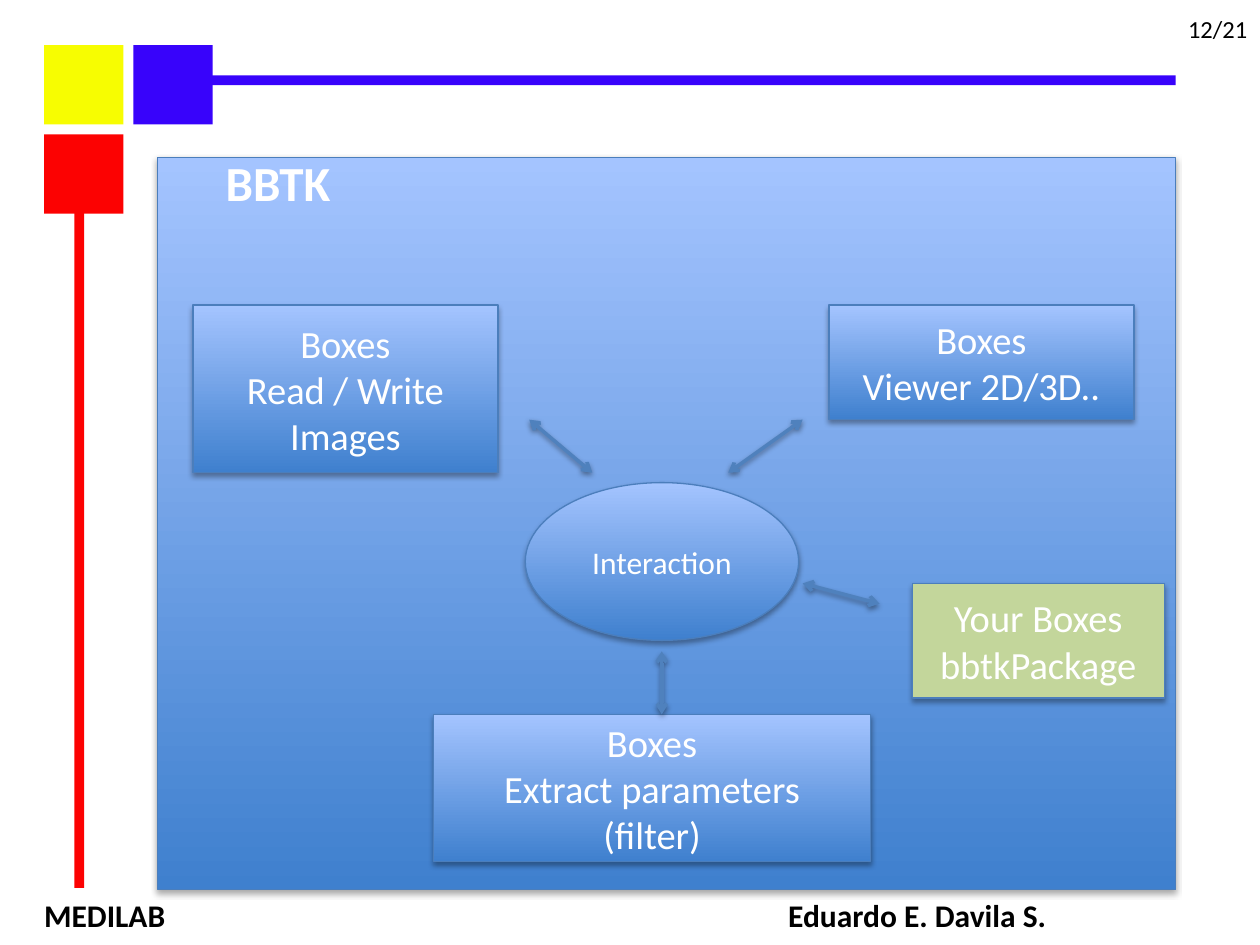
"""Build the BBTK slide: kinds of boxes around a central interaction."""
from lxml import etree
from pptx import Presentation
from pptx import util as u
from pptx.dml.color import RGBColor
from pptx.enum import shapes, text
from pptx.oxml import ns

WHITE = RGBColor(0xFF, 0xFF, 0xFF)
BLACK = RGBColor(0x00, 0x00, 0x00)
YELLOW = RGBColor(0xF7, 0xFD, 0x01)
RED = RGBColor(0xFC, 0x02, 0x02)
BLUE = RGBColor(0x38, 0x03, 0xFB)
DEEP = RGBColor(0x3F, 0x80, 0xCE)
PALE = RGBColor(0xA4, 0xC4, 0xFF)
EDGE = RGBColor(0x4B, 0x7E, 0xBC)
ARROW = RGBColor(0x4F, 0x81, 0xBD)
GREEN = RGBColor(0xC3, 0xD6, 0x9B)
RECT = shapes.MSO_SHAPE.RECTANGLE
OVAL = shapes.MSO_SHAPE.OVAL


def add(parent, tag, **attrs):
    return etree.SubElement(parent, ns.qn(tag), {k: str(v) for k, v in attrs.items()})


class Deck:
    def __init__(self, slide, font="Calibri"):
        self.s = slide
        self.font = font

    def set_text(self, tf, words, size, color, bold=False, align=text.PP_ALIGN.LEFT):
        tf.word_wrap = True
        tf.text = words
        for p in tf.paragraphs:
            p.alignment = align
            for r in p.runs:
                r.font.name = self.font
                r.font.size = u.Pt(size)
                r.font.bold = bold
                r.font.color.rgb = color

    def shadow(self, effects, alpha, dist):
        sh = add(effects, "a:outerShdw", blurRad=u.Pt(3.1), dist=u.Pt(dist),
                 dir=90 * 60000, rotWithShape=0)
        add(add(sh, "a:srgbClr", val=BLACK), "a:alpha", val=alpha * 1000)

    def shape(self, kind, at):
        sp = self.s.shapes.add_shape(kind, *map(u.Cm, at))
        sp.shadow.inherit = False
        return sp

    def block(self, at, color):
        sp = self.shape(RECT, at)
        sp.fill.solid()
        sp.fill.fore_color.rgb = color
        sp.line.fill.background()

    def box(self, at, words, size=22, kind=RECT, fill=None, bold=False,
            align=text.PP_ALIGN.CENTER):
        sp = self.shape(kind, at)
        if fill:
            sp.fill.solid()
            sp.fill.fore_color.rgb = fill
        else:
            sp.fill.gradient()
            sp.fill.gradient_angle = 90
            for stop, color in zip(sp.fill.gradient_stops, (DEEP, PALE)):
                stop.color.rgb = color
        sp.line.color.rgb = EDGE
        sp.line.width = u.Pt(0.75)
        self.shadow(sp._element.spPr.find(ns.qn("a:effectLst")), 35, 1.8)
        sp.text_frame.vertical_anchor = text.MSO_ANCHOR.MIDDLE
        self.set_text(sp.text_frame, words, size, WHITE, bold, align)
        return sp

    def label(self, at, words, size, bold=False):
        sp = self.s.shapes.add_textbox(*map(u.Cm, at))
        self.set_text(sp.text_frame, words, size, BLACK, bold)
        return sp

    def arrow(self, ends):
        c = self.s.shapes.add_connector(shapes.MSO_CONNECTOR.STRAIGHT, *map(u.Cm, ends))
        c.line.color.rgb = ARROW
        c.line.width = u.Pt(2)
        ln = c._element.spPr.find(ns.qn("a:ln"))
        for end in ("a:headEnd", "a:tailEnd"):
            add(ln, end, type="arrow")
        self.shadow(add(c._element.spPr, "a:effectLst"), 38, 1.6)


def main():
    prs = Presentation()
    prs.slide_width, prs.slide_height = u.Cm(25.4), u.Cm(19.05)
    d = Deck(prs.slides.add_slide(prs.slide_layouts[6]))

    panel = d.box((3.18, 3.18, 20.52, 14.76), "BBTK", 28, bold=True,
                  align=text.PP_ALIGN.LEFT)
    tf = panel.text_frame
    tf.vertical_anchor = text.MSO_ANCHOR.TOP
    tf.margin_left, tf.margin_top = u.Cm(1.37), u.Cm(-0.1)

    left, top, side, step = 0.89, 0.91, 1.6, 1.8
    for col, row, color in ((0, 0, YELLOW), (0, 1, RED), (1, 0, BLUE)):
        d.block((left + col * step, top + row * step, side, side), color)
    d.block((3.89, 1.52, 19.81, 0.2), BLUE)
    d.block((1.5, 4.11, 0.2, 13.79), RED)

    footer = d.label((0.51, 17.93, 24.89, 0.79), "MEDILAB\tEduardo E. Davila S.", 18, True)
    footer.text_frame.margin_left = u.Cm(0.38)
    p = footer.text_frame.paragraphs[0]
    add(add(p._p.get_or_add_pPr(), "a:tabLst"), "a:tab", pos=u.Cm(15), algn="l")
    d.label((23.7, 0.15, 2.21, 0.84), "12/21", 14)

    d.box((3.89, 6.15, 6.15, 3.38), "Boxes\nRead / Write\nImages")
    d.box((16.71, 6.15, 6.15, 2.31), "Boxes\nViewer 2D/3D..")
    d.box((8.74, 14.4, 8.81, 2.97), "Boxes\nExtract parameters\n(filter)")
    d.box((10.59, 9.73, 5.51, 3.18), "Interaction", 18, OVAL)
    d.box((18.39, 11.76, 5.08, 2.31), "Your Boxes bbtkPackage", fill=GREEN)

    for ends in ((10.67, 8.46, 11.94, 9.53), (16.18, 8.46, 14.68, 9.53),
                 (13.34, 13.13, 13.34, 14.4), (16.18, 11.76, 17.73, 12.17)):
        d.arrow(ends)

    prs.save("out.pptx")


if __name__ == "__main__":
    main()
